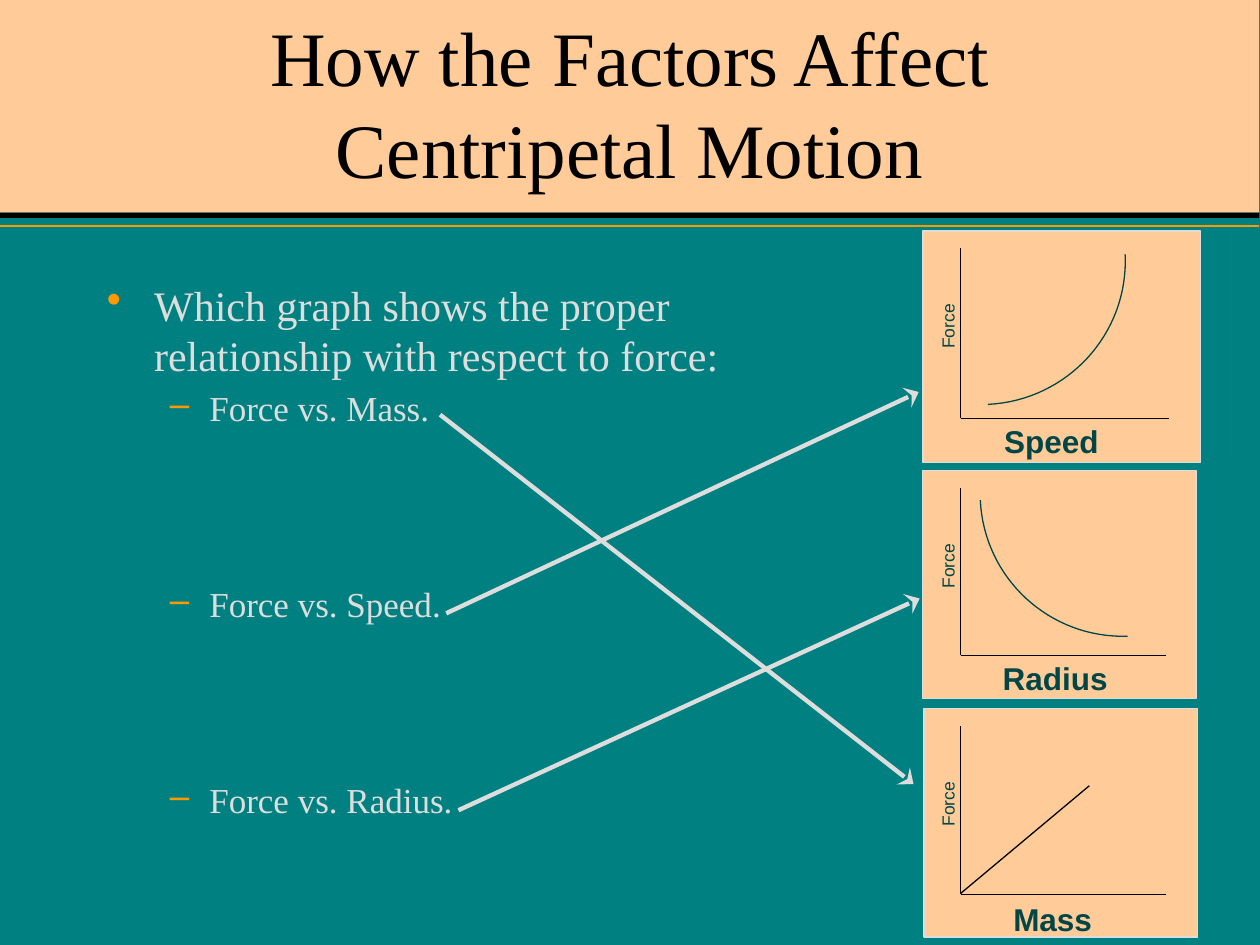
"""Build a slide matching force relationships to their graphs."""
from lxml.etree import SubElement
from pptx import Presentation
from pptx.dml.color import RGBColor
from pptx.enum.shapes import MSO_CONNECTOR, MSO_SHAPE
from pptx.enum.text import MSO_ANCHOR, PP_ALIGN
from pptx.oxml.ns import qn
from pptx.util import Pt

SERIF, SANS = "Times New Roman", "Arial"
PEACH, BLACK, TEAL = "FFCC99", "000000", "008080"
ORANGE, PALE, DARK = "FF9900", "DDDDDD", "004646"


def color(code):
    """Turn a hex string into a colour."""
    return RGBColor.from_string(code)


def write(para, text, font=SERIF, size=20, ink=PALE, bold=False,
          align=PP_ALIGN.LEFT, before=0):
    """Fill a paragraph with formatted text."""
    para.alignment, para.space_before = align, Pt(before)
    run = para.add_run()
    run.text = text
    run.font.name, run.font.size, run.font.bold = font, Pt(size), bold
    run.font.color.rgb = color(ink)


def bullet(para, mark, left, hang):
    """Give a paragraph a coloured bullet and a hanging indent."""
    props = para._p.get_or_add_pPr()
    props.set("marL", str(Pt(left)))
    props.set("indent", str(-Pt(hang)))
    tint = SubElement(props, qn("a:buClr"))
    SubElement(tint, qn("a:srgbClr"), val=ORANGE)
    SubElement(props, qn("a:buChar"), char=mark)


def bezier(ends, steps=32):
    """List points along a cubic curve."""
    points = []
    for step in range(steps + 1):
        t = step / steps
        parts = ((1 - t) ** 3, 3 * t * (1 - t) ** 2, 3 * t * t * (1 - t), t ** 3)
        points.append(tuple(Pt(sum(k * p[axis] for k, p in zip(parts, ends)))
                            for axis in (0, 1)))
    return points


class Deck:
    """Hold the style and the current slide."""

    def __init__(self, width, height):
        """Open a blank slide with the background colour."""
        self.prs = Presentation()
        self.prs.slide_width, self.prs.slide_height = Pt(width), Pt(height)
        self.slide = self.prs.slides.add_slide(self.prs.slide_layouts[6])
        self.shapes = self.slide.shapes
        fill = self.slide.background.fill
        fill.solid()
        fill.fore_color.rgb = color(TEAL)

    def rect(self, box, fill, edge=None):
        """Add a filled rectangle."""
        shape = self.shapes.add_shape(MSO_SHAPE.RECTANGLE, *map(Pt, box))
        shape.shadow.inherit = False
        shape.fill.solid()
        shape.fill.fore_color.rgb = color(fill)
        if edge:
            shape.line.color.rgb, shape.line.width = color(edge), Pt(0.75)
        else:
            shape.line.fill.background()

    def line(self, start, end, ink=BLACK, width=0.75, arrow=False):
        """Add a straight line, with an arrowhead if asked."""
        link = self.shapes.add_connector(
            MSO_CONNECTOR.STRAIGHT, *map(Pt, (*start, *end)))
        link.line.color.rgb, link.line.width = color(ink), Pt(width)
        props = link._element.spPr
        if arrow:
            SubElement(props.find(qn("a:ln")), qn("a:tailEnd"),
                       type="stealth", w="lg", len="med")
        SubElement(props, qn("a:effectLst"))

    def curve(self, ends):
        """Add an open curve."""
        first, *rest = bezier(ends)
        pen = self.shapes.build_freeform(*first)
        pen.add_line_segments(rest, close=False)
        shape = pen.convert_to_shape()
        shape.shadow.inherit = False
        shape.fill.background()
        shape.line.color.rgb, shape.line.width = color(DARK), Pt(0.75)

    def frame(self, box, wrap=True, anchor=MSO_ANCHOR.TOP, turn=0):
        """Add a text box and return its text frame."""
        shape = self.shapes.add_textbox(*map(Pt, box))
        shape.rotation = turn
        shape.text_frame.word_wrap = wrap
        shape.text_frame.vertical_anchor = anchor
        return shape.text_frame

    def label(self, text, box, turn=0, **style):
        """Add a centred label on one line."""
        frame = self.frame(box, wrap=False, turn=turn)
        frame.margin_left = frame.margin_right = 0
        write(frame.paragraphs[0], text, SANS, ink=DARK,
              align=PP_ALIGN.CENTER, **style)

    def graph(self, box, span, drop):
        """Add a panel with two axes and a force label."""
        left, top = 549, box[1]
        base = top + drop
        self.rect(box, PEACH, PALE)
        self.line((left, top + 10), (left, base))
        self.line((left, base), (left + span, base))
        self.label("Force", (518.5, top + 48.5, 39, 12), turn=270, size=10)


def main():
    """Draw the slide and save it."""
    deck = Deck(720, 540)
    deck.rect((0, 0, 719.5, 121.5), PEACH)
    deck.rect((0, 121.5, 719.5, 3), BLACK)
    deck.line((0, 129), (719.5, 129), ORANGE, 1)

    title = deck.frame((54, 27.5, 612, 87), anchor=MSO_ANCHOR.BOTTOM)
    write(title.paragraphs[0], "How the Factors Affect Centripetal Motion",
          size=44, ink=BLACK, align=PP_ALIGN.CENTER)

    body = deck.frame((54, 156, 370, 324))
    lead = body.paragraphs[0]
    write(lead, "Which graph shows the proper relationship with respect to force:",
          size=24)
    bullet(lead, "•", 27, 27)
    for name, gap in (("Mass", 4), ("Speed", 88), ("Radius", 88)):
        para = body.add_paragraph()
        write(para, f"Force vs. {name}.", before=gap)
        bullet(para, "–", 58.5, 22.5)

    deck.graph((527, 269, 156.5, 130), 117, 105.5)
    deck.curve(((644.4, 363.6), (599.8, 365), (562.3, 330.5), (560.2, 285.8)))
    deck.graph((528, 405, 156.5, 130.5), 117, 106)
    deck.line((549, 510.5), (622.5, 449))
    deck.graph((527.5, 132, 158.5, 132.5), 119, 107)
    deck.curve(((643, 145.4), (645.1, 190.8), (609.8, 229), (564.5, 231.1)))

    for name, left, top, width in (("Speed", 566.5, 237.5, 68.5),
                                   ("Radius", 566, 373, 74),
                                   ("Mass", 571.5, 511, 60)):
        deck.label(name, (left, top, width, 29), size=18, bold=True)

    for start, end in (((251.5, 237), (522, 448)),
                       ((255, 350.5), (525, 224)),
                       ((262, 463), (525.5, 342))):
        deck.line(start, end, PALE, 2.5, arrow=True)
    deck.prs.save("out.pptx")


if __name__ == "__main__":
    main()
